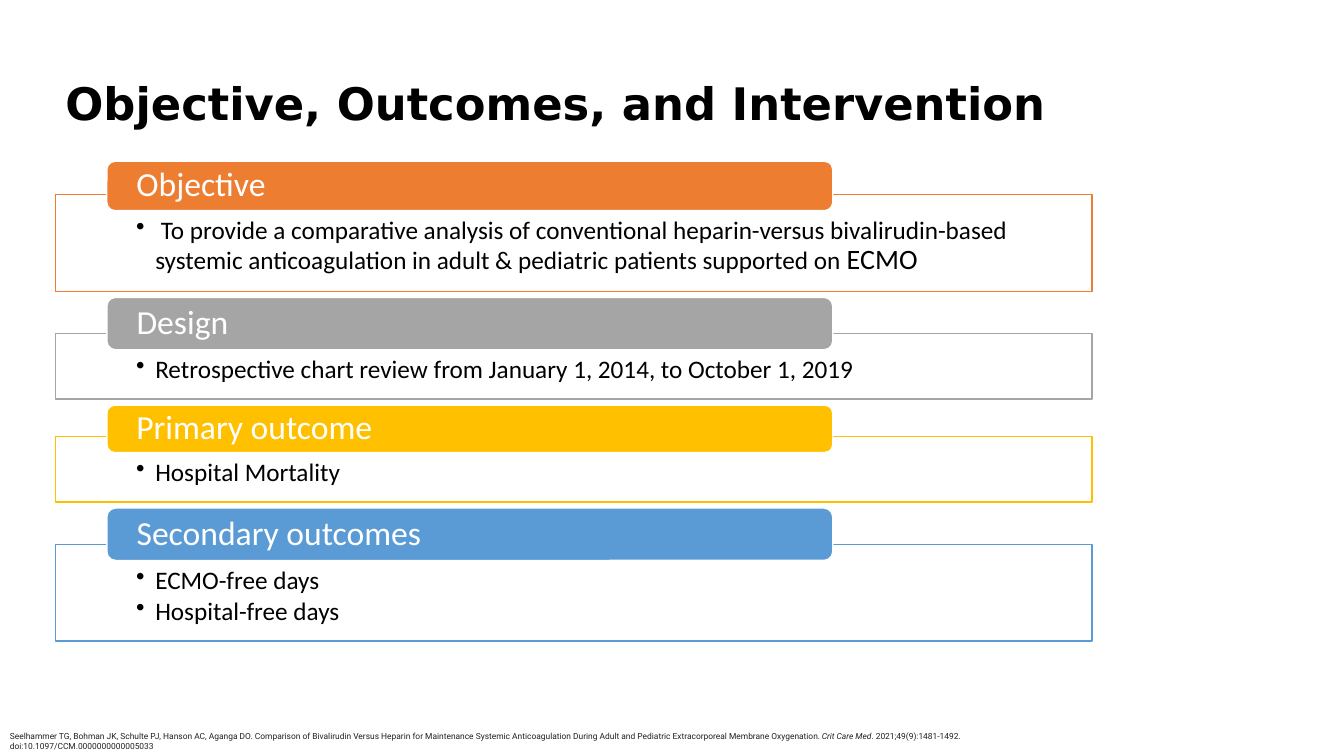
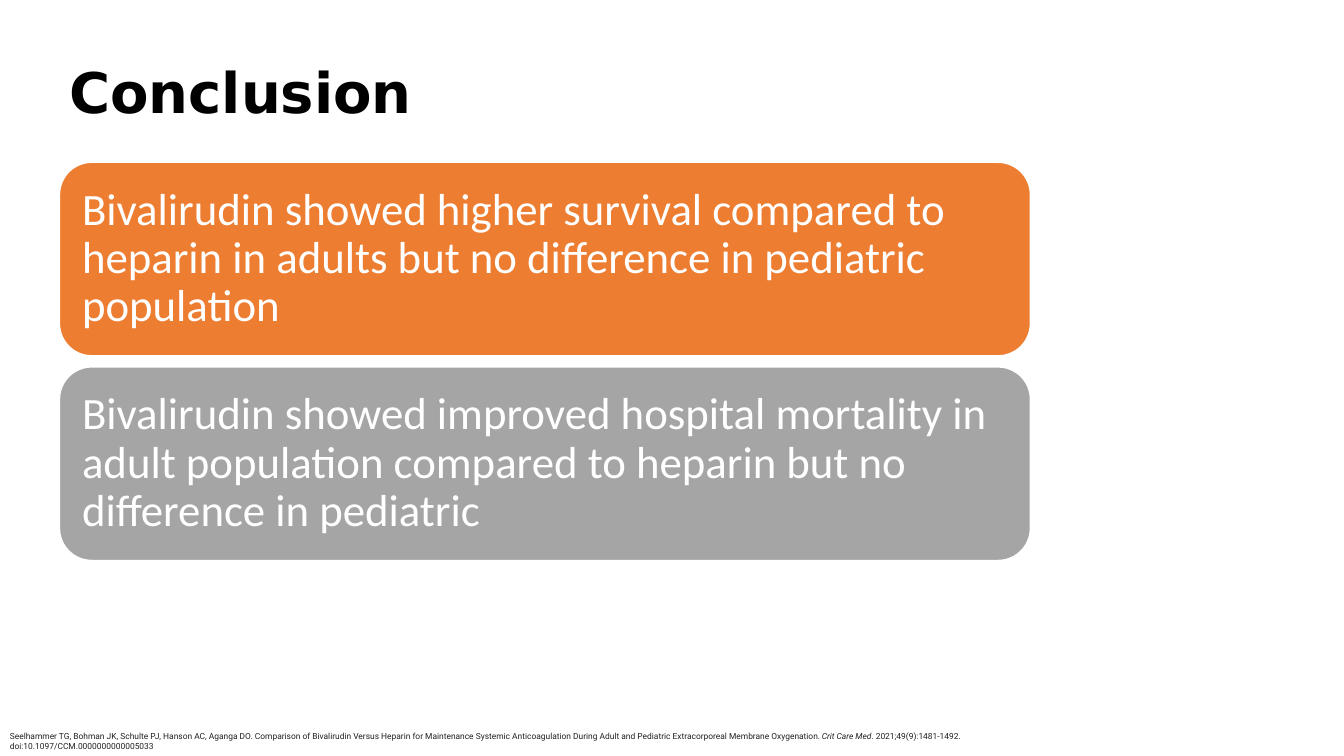
from dataclasses import dataclass

from lxml.etree import SubElement
from pptx import Presentation
from pptx.dml.color import RGBColor
from pptx.enum.shapes import MSO_SHAPE as Shape
from pptx.enum.text import MSO_ANCHOR as Anchor, PP_ALIGN as Align
from pptx.oxml.ns import qn
from pptx.util import Pt

PX = 9144
WHITE = RGBColor(0xFF, 0xFF, 0xFF)
BLACK = RGBColor(0x00, 0x00, 0x00)
INK = RGBColor(0x21, 0x21, 0x21)
ORANGE = RGBColor(0xED, 0x7D, 0x31)
GRAY = RGBColor(0xA5, 0xA5, 0xA5)
GOLD = RGBColor(0xFF, 0xC0, 0x00)
BLUE = RGBColor(0x5B, 0x9B, 0xD5)
BODY, TITLE, CITE = "Calibri", "DejaVu Sans", "Roboto"

Box = tuple[int, int, int, int]


@dataclass(frozen=True)
class Run:
    text: str
    size: int
    italic: bool = False


@dataclass(frozen=True)
class Section:
    heading: str
    color: RGBColor
    heading_h: int
    card_h: int
    bullets: list[list[Run]]


SECTIONS = [
    Section("Objective", ORANGE, 49, 96, [[
        Run(" To provide a comparative analysis of conventional heparin-versus "
            "bivalirudin-based systemic anticoagulation in adult & pediatric "
            "patients supported on ", 18),
        Run("ECMO", 20),
    ]]),
    Section("Design", GRAY, 52, 65, [[
        Run("Retrospective chart review from January 1, 2014, to October 1, 2019", 18),
    ]]),
    Section("Primary outcome", GOLD, 47, 65, [[Run("Hospital Mortality", 18)]]),
    Section("Secondary outcomes", BLUE, 52, 96, [
        [Run("ECMO-free days", 18)],
        [Run("Hospital-free days", 18)],
    ]),
]
CONCLUSIONS = [
    ("Bivalirudin showed higher survival compared to heparin in adults "
     "but no difference in pediatric population", ORANGE),
    ("Bivalirudin showed improved hospital mortality in adult population "
     "compared to heparin but no difference in pediatric", GRAY),
]
CITATION = [
    Run("Seelhammer TG, Bohman JK, Schulte PJ, Hanson AC, Aganga DO. Comparison of "
        "Bivalirudin Versus Heparin for Maintenance Systemic Anticoagulation During "
        "Adult and Pediatric Extracorporeal Membrane Oxygenation. ", 6),
    Run("Crit Care Med", 6, italic=True),
    Run(". 2021;49(9):1481-1492. doi:10.1097/CCM.0000000000005033", 6),
]


def add_bullet(p) -> None:
    pPr = p._p.get_or_add_pPr()
    pPr.set("marL", str(19 * PX))
    pPr.set("indent", str(-19 * PX))
    SubElement(pPr, qn("a:buChar")).set("char", "•")


def write(sp, paragraphs: list[list[Run]], *, font: str = BODY, color: RGBColor = WHITE,
          bold: bool = False, bullets: bool = False, anchor: Anchor = Anchor.MIDDLE,
          insets: Box = (10, 5, 10, 5), spacing: float = 0.9) -> None:
    tf = sp.text_frame
    tf.word_wrap = True
    tf.vertical_anchor = anchor
    tf.margin_left, tf.margin_top, tf.margin_right, tf.margin_bottom = (
        v * PX for v in insets)
    for i, runs in enumerate(paragraphs):
        p = tf.add_paragraph() if i else tf.paragraphs[0]
        if bullets:
            add_bullet(p)
            p.space_after = Pt(3)
        p.alignment = Align.LEFT
        p.line_spacing = spacing
        for run in runs:
            r = p.add_run()
            r.text = run.text
            f = r.font
            f.name, f.size, f.bold, f.italic = font, Pt(run.size), bold, run.italic
            f.color.rgb = color


def add_panel(s, kind: Shape, box: Box, fill: RGBColor, line: RGBColor,
              opacity: int = 100):
    sp = s.shapes.add_shape(kind, *(v * PX for v in box))
    sp.shadow.inherit = False
    sp.fill.solid()
    sp.fill.fore_color.rgb = fill
    sp.line.color.rgb = line
    sp.line.width = Pt(1)
    if opacity < 100:
        clr = sp._element.spPr.find(qn("a:solidFill")).find(qn("a:srgbClr"))
        SubElement(clr, qn("a:alpha")).set("val", str(opacity * 1000))
    return sp


def add_text(s, box: Box, runs: list[Run], **fmt) -> None:
    write(s.shapes.add_textbox(*(v * PX for v in box)), [runs], **fmt)


def new_slide(prs, title: str, size: int, box: Box):
    s = prs.slides.add_slide(prs.slide_layouts[6])
    add_text(s, box, [Run(title, size)], font=TITLE, color=BLACK, bold=True)
    add_text(s, (0, 720, 986, 30), CITATION, font=CITE, color=INK,
             anchor=Anchor.TOP, spacing=1.0)
    return s


def add_sections(s) -> None:
    overlap, gap = 16, 6
    y = 160
    for sec in SECTIONS:
        card_y = y + sec.heading_h - overlap
        card = add_panel(s, Shape.RECTANGLE, (55, card_y, 1028, sec.card_h),
                         WHITE, sec.color, opacity=90)
        write(card, sec.bullets, color=BLACK, bullets=True, anchor=Anchor.TOP,
              insets=(80, 23, 80, 14))
        heading = add_panel(s, Shape.ROUNDED_RECTANGLE, (106, y, 720, sec.heading_h),
                            sec.color, WHITE)
        write(heading, [[Run(sec.heading, 24)]], insets=(27, 0, 27, 0))
        y = card_y + sec.card_h + gap


def add_conclusions(s) -> None:
    top, height, gap = 161, 192, 11
    for i, (text, color) in enumerate(CONCLUSIONS):
        sp = add_panel(s, Shape.ROUNDED_RECTANGLE,
                       (59, top + i * (height + gap), 963, height), color, WHITE)
        write(sp, [[Run(text, 32)]], insets=(13, 13, 13, 13))


def main() -> None:
    prs = Presentation()
    prs.slide_width, prs.slide_height = 1333 * PX, 750 * PX
    add_sections(new_slide(prs, "Objective, Outcomes, and Intervention", 32,
                           (55, 52, 1010, 107)))
    add_conclusions(new_slide(prs, "Conclusion", 40, (59, 59, 945, 71)))
    prs.save("out.pptx")


if __name__ == "__main__":
    main()
